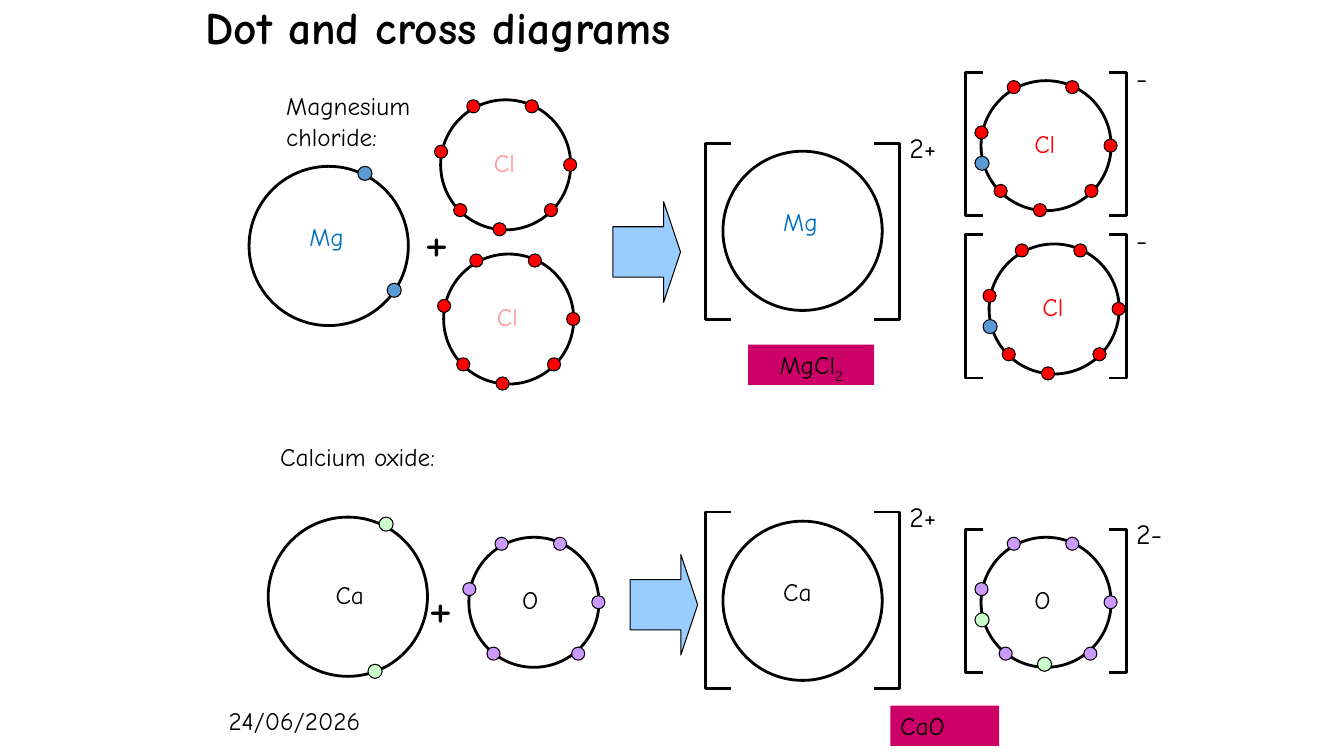
from pptx import Presentation
from pptx import util as u
from pptx.dml.color import RGBColor
from pptx.enum import shapes, text

Inches = u.Inches
KIND = shapes.MSO_SHAPE
FONT = "Comic Neue"
BLACK = RGBColor(0x00, 0x00, 0x00)
BLUE = RGBColor(0x00, 0x70, 0xC0)
STEEL = RGBColor(0x5B, 0x9B, 0xD5)
RED = RGBColor(0xFF, 0x00, 0x00)
PINK = RGBColor(0xFF, 0x99, 0x99)
PURPLE = RGBColor(0xCC, 0x99, 0xFF)
GREEN = RGBColor(0xCC, 0xFF, 0xCC)
SKY = RGBColor(0x99, 0xCC, 0xFF)
MAGENTA = RGBColor(0xCC, 0x00, 0x66)

deck = Presentation()
deck.slide_width = Inches(13.33)
deck.slide_height = Inches(7.5)
page = deck.slides.add_slide(deck.slide_layouts[5])


def draw(kind, left, top, width, height, fill=None, weight=0.75):
    shape = page.shapes.add_shape(kind, Inches(left), Inches(top), Inches(width), Inches(height))
    shape.shadow.inherit = False
    shape.line.color.rgb = BLACK
    shape.line.width = u.Pt(weight)
    if fill is None:
        shape.fill.background()
    else:
        shape.fill.solid()
        shape.fill.fore_color.rgb = fill
    return shape


def write(words, left, top, width, height=0.4, size=18, color=BLACK):
    box = page.shapes.add_textbox(Inches(left), Inches(top), Inches(width), Inches(height))
    box.text_frame.word_wrap = True
    span = box.text_frame.paragraphs[0].add_run()
    span.text = words
    span.font.name = FONT
    span.font.size = u.Pt(size)
    span.font.color.rgb = color
    return box


title = page.shapes.title
title.left, title.top = Inches(1.94), Inches(0)
title.width, title.height = Inches(9), Inches(0.6)
title.text_frame.vertical_anchor = text.MSO_ANCHOR.MIDDLE
para = title.text_frame.paragraphs[0]
para.alignment = text.PP_ALIGN.LEFT
para.line_spacing = 0.9
span = para.add_run()
span.text = "Dot and cross diagrams"
span.font.name = FONT
span.font.size = u.Pt(32.4)
span.font.bold = True
span.font.color.rgb = BLACK

date = write("24/06/2026", 2.17, 6.95, 2.33)
date.text_frame.vertical_anchor = text.MSO_ANCHOR.MIDDLE
write("Magnesium chloride:", 2.74, 0.85, 2.17, 0.71)
write("Calcium oxide:", 2.68, 4.33, 2.67)

metals = [
    ("Mg", 2.47, 1.65, 0.5, BLUE, STEEL, [(1.08, 0), (1.37, 1.16)]),
    ("Mg", 7.17, 1.5, 0.5, BLUE, STEEL, []),
    ("Ca", 2.66, 5.13, 0.57, BLACK, GREEN, [(1.1, 0), (0.99, 1.46)]),
    ("Ca", 7.17, 5.17, 0.5, BLACK, GREEN, []),
]
for symbol, left, top, inset, color, dot, electrons in metals:
    draw(KIND.OVAL, left, top, 1.58, 1.58, weight=2)
    write(symbol, left + inset, top + inset, 0.73, color=color)
    for x, y in electrons:
        draw(KIND.OVAL, left + x, top + y, 0.14, 0.14, dot)

upper = [(0.26, 0), (0.84, 0), (-0.06, 0.45), (1.22, 0.58)]
chlorine = upper + [(0.13, 1.03), (1.03, 1.03), (0.52, 1.22)]
oxygen = upper + [(0.18, 1.09), (1.02, 1.09)]
side = (-0.06, 0.75)
nonmetals = [
    ("Cl", 4.37, 0.99, PINK, RED, chlorine, STEEL, []),
    ("Cl", 4.4, 2.52, PINK, RED, chlorine, STEEL, []),
    ("Cl", 9.73, 0.8, RED, RED, chlorine, STEEL, [side]),
    ("Cl", 9.81, 2.42, RED, RED, chlorine, STEEL, [side]),
    ("O", 4.65, 5.33, BLACK, PURPLE, oxygen, GREEN, []),
    ("O", 9.73, 5.33, BLACK, PURPLE, oxygen, GREEN, [(0.56, 1.19), side]),
]
for symbol, left, top, color, dot, own, gained_dot, gained in nonmetals:
    draw(KIND.OVAL, left, top, 1.29, 1.29, weight=2)
    write(symbol, left + 0.43, top + 0.42, 0.51, color=color)
    for x, y in own:
        draw(KIND.OVAL, left + x, top + y, 0.13, 0.13, dot)
    for x, y in gained:
        draw(KIND.OVAL, left + x, top + y, 0.14, 0.14, gained_dot)

ions = [
    ("2+", 7, 8.67, 1.42, 0.25, 1.75),
    ("-", 9.58, 11, 0.72, 0.17, 1.42),
    ("-", 9.58, 11, 2.33, 0.17, 1.42),
    ("2+", 7, 8.67, 5.08, 0.25, 1.75),
    ("2-", 9.58, 11, 5.25, 0.17, 1.42),
]
for charge, left, right, top, width, height in ions:
    for kind, x in ((KIND.LEFT_BRACKET, left), (KIND.RIGHT_BRACKET, right)):
        bracket = draw(kind, x, top, width, height, weight=2)
        bracket.adjustments[0] = 0
    write(charge, right + width, top - 0.17, 0.58, 0.43, size=20)

for plus_left, plus_top, arrow_left, arrow_top in ((4.11, 1.99, 6.08, 2), (4.15, 5.62, 6.25, 5.5)):
    write("+", plus_left, plus_top, 0.58, 0.77, size=40)
    arrow = draw(KIND.RIGHT_ARROW, arrow_left, arrow_top, 0.67, 1, SKY)
    arrow.adjustments[0] = 0.5
    arrow.adjustments[1] = 0.25

chloride = write("MgCl", 7.42, 3.42, 1.25)
para = chloride.text_frame.paragraphs[0]
para.alignment = text.PP_ALIGN.CENTER
span = para.add_run()
span.text = "2"
span.font.name = FONT
span.font.size = u.Pt(18)
span.font.color.rgb = BLACK
span.font._element.set("baseline", "-25000")
oxide = write("CaO", 8.83, 7, 1.08)
for formula in (chloride, oxide):
    formula.fill.solid()
    formula.fill.fore_color.rgb = MAGENTA

deck.save("out.pptx")
